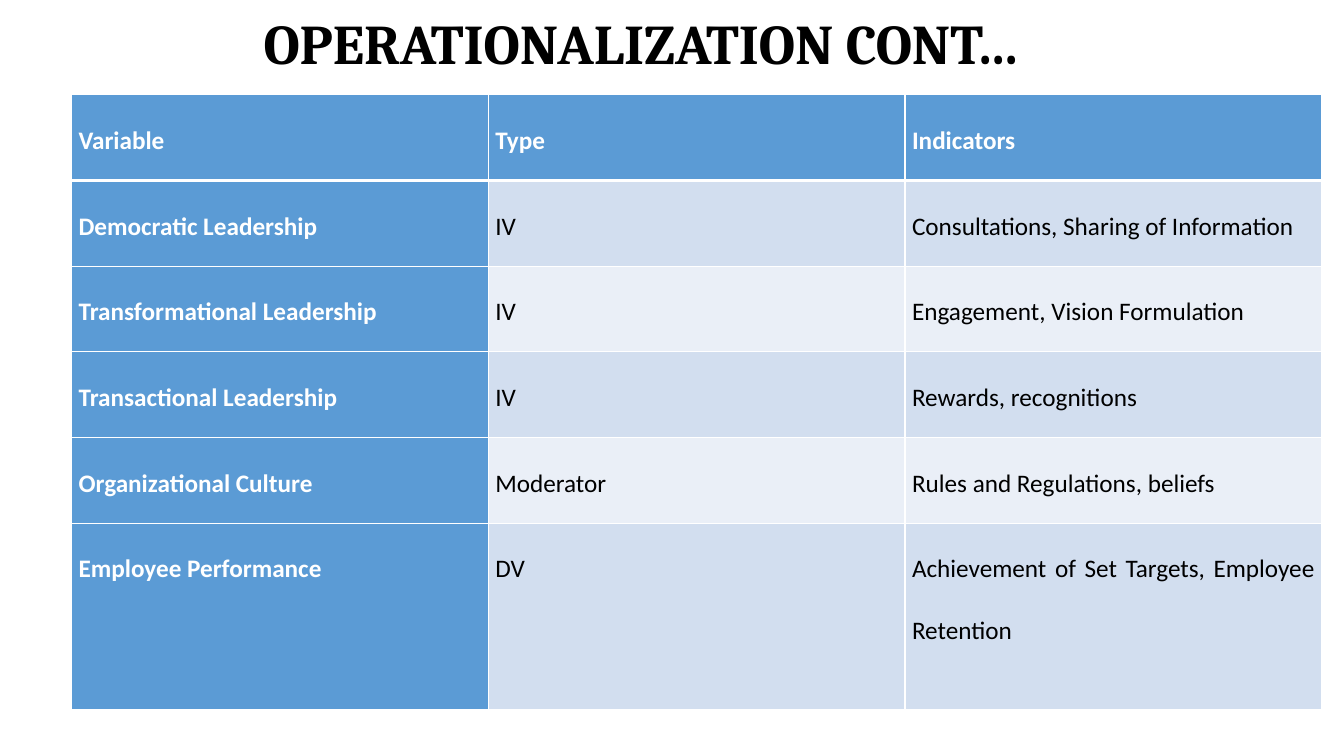
"""Build the operationalization slide: a title above a table of variables."""
from lxml import etree
from pptx import Presentation
from pptx import util as u
from pptx.dml.color import RGBColor
from pptx.enum import text
from pptx.oxml import parse_xml
from pptx.oxml.ns import nsdecls

TITLE = "OPERATIONALIZATION CONT…"
ROWS = [
    ("Variable", "Type", "Indicators"),
    ("Democratic Leadership", "IV", "Consultations, Sharing of Information"),
    ("Transformational Leadership", "IV", "Engagement, Vision Formulation"),
    ("Transactional Leadership", "IV", "Rewards, recognitions"),
    ("Organizational Culture", "Moderator", "Rules and Regulations, beliefs"),
    ("Employee Performance", "DV", "Achievement of Set Targets, Employee Retention"),
]
TABLE_LEFT, TABLE_TOP, TABLE_WIDTH = 0.71, 0.94, 12.4
ROW_HEIGHTS = [0.85] * 5 + [1.85]

BLACK = RGBColor(0x00, 0x00, 0x00)
WHITE = RGBColor(0xFF, 0xFF, 0xFF)
BLUE = RGBColor(0x5B, 0x9B, 0xD5)
BANDS = [RGBColor(0xEA, 0xEF, 0xF7), RGBColor(0xD2, 0xDE, 0xEF)]


def set_font(p, name, size, color, bold):
    p.font.name = name
    p.font.size = u.Pt(size)
    p.font.bold = bold
    p.font.color.rgb = color


def add_title(s):
    sp = s.shapes.add_textbox(u.Inches(1.12), u.Inches(0.11), u.Inches(10.49), u.Inches(0.7))
    tf = sp.text_frame
    tf.word_wrap = True
    tf.vertical_anchor = text.MSO_ANCHOR.MIDDLE
    p = tf.paragraphs[0]
    p.alignment = text.PP_ALIGN.CENTER
    p.line_spacing = 0.9
    set_font(p, "Cambria", 40, BLACK, True)
    r = p.add_run()
    r.text = TITLE
    r._r.get_or_add_rPr().append(parse_xml(
        f'<a:effectLst {nsdecls("a")}>'
        '<a:outerShdw blurRad="38100" dist="38100" dir="2700000" algn="tl">'
        '<a:srgbClr val="000000"><a:alpha val="43000"/></a:srgbClr>'
        '</a:outerShdw></a:effectLst>'))


def set_borders(cell, top, bottom):
    tcPr = cell._tc.get_or_add_tcPr()
    for side, width in (("L", 1), ("R", 1), ("T", top), ("B", bottom)):
        ln = parse_xml(f'<a:ln{side} {nsdecls("a")} w="{u.Pt(width)}"/>')
        fill = etree.SubElement(ln, "{%s}solidFill" % ln.nsmap["a"])
        etree.SubElement(fill, "{%s}srgbClr" % ln.nsmap["a"], val=str(WHITE))
        tcPr.append(ln)


def fill_cell(cell, row, col, words):
    strong = row == 0 or col == 0
    set_borders(cell, 3 if row == 1 else 1, 3 if row == 0 else 1)
    cell.fill.solid()
    cell.fill.fore_color.rgb = BLUE if strong else BANDS[row % 2]
    cell.margin_left = cell.margin_right = u.Inches(0.07)
    cell.margin_top = cell.margin_bottom = 0
    p = cell.text_frame.paragraphs[0]
    p.text = words
    p.alignment = text.PP_ALIGN.JUSTIFY
    p.line_spacing = 2.0
    p.space_after = u.Pt(6)
    set_font(p, "Calibri", 18, WHITE if strong else BLACK, strong)


def add_variables(s):
    cols = len(ROWS[0])
    table = s.shapes.add_table(
        len(ROWS), cols, u.Inches(TABLE_LEFT), u.Inches(TABLE_TOP),
        u.Inches(TABLE_WIDTH), u.Inches(sum(ROW_HEIGHTS))).table
    for column in table.columns:
        column.width = u.Inches(TABLE_WIDTH / cols)
    for row, (height, values) in enumerate(zip(ROW_HEIGHTS, ROWS)):
        table.rows[row].height = u.Inches(height)
        for col, words in enumerate(values):
            fill_cell(table.cell(row, col), row, col, words)


def main():
    prs = Presentation()
    prs.slide_width, prs.slide_height = u.Inches(13.33), u.Inches(7.5)
    s = prs.slides.add_slide(prs.slide_layouts[6])
    add_title(s)
    add_variables(s)
    prs.save("out.pptx")


if __name__ == "__main__":
    main()
